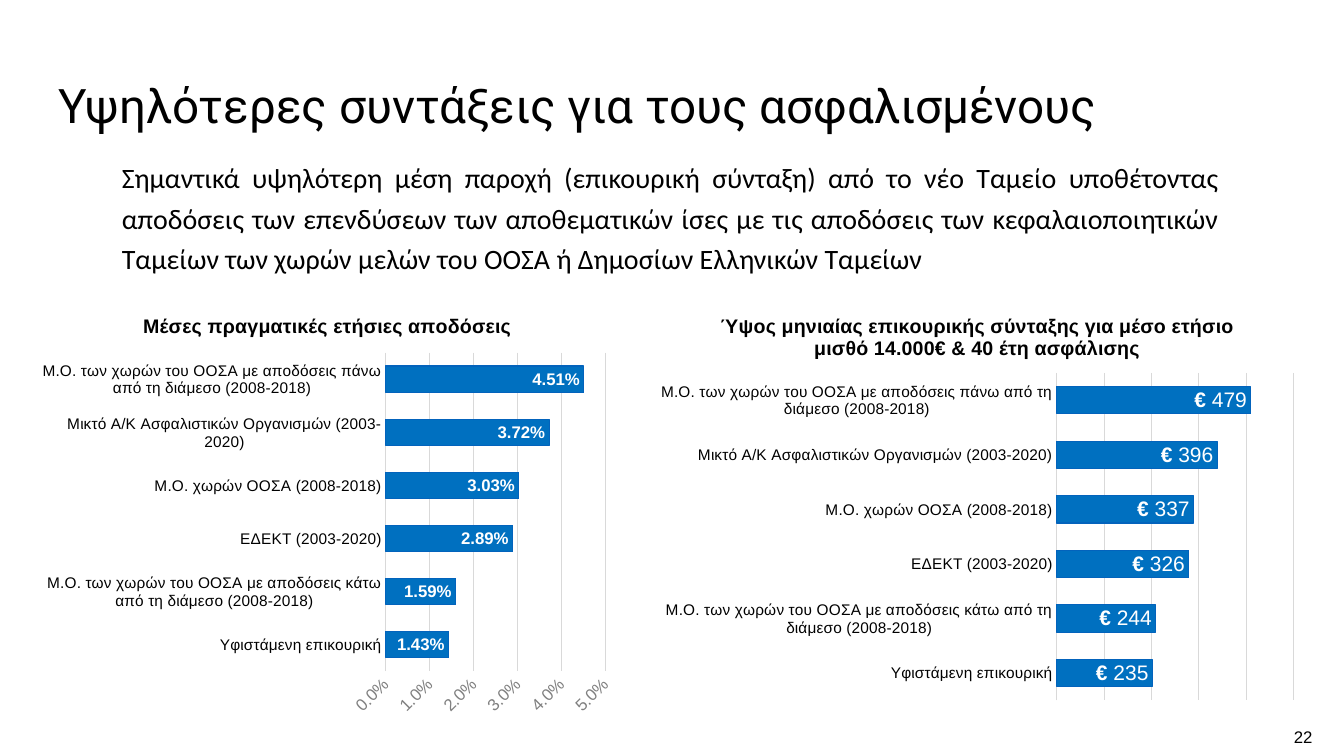
from dataclasses import dataclass
from typing import Optional

from lxml.etree import SubElement
from pptx import Presentation
from pptx.chart.chart import Chart
from pptx.chart.data import CategoryChartData
from pptx.dml.color import RGBColor as RGB
from pptx.enum.chart import XL_CHART_TYPE as ChartType
from pptx.enum.chart import XL_LABEL_POSITION as LabelPos
from pptx.enum.chart import XL_TICK_MARK as Tick
from pptx.enum.text import PP_ALIGN as Align
from pptx.oxml.ns import qn
from pptx.slide import Slide
from pptx.util import Emu, Pt

PX = 9144


@dataclass(frozen=True)
class Theme:
    black: RGB = RGB(0x00, 0x00, 0x00)
    white: RGB = RGB(0xFF, 0xFF, 0xFF)
    bar: RGB = RGB(0x00, 0x70, 0xC0)
    bar_edge: RGB = RGB(0x03, 0x63, 0xBC)
    grid: RGB = RGB(0xD9, 0xD9, 0xD9)
    tick: RGB = RGB(0x80, 0x80, 0x80)
    heading_font: str = "Roboto"
    body_font: str = "Calibri"
    chart_font: str = "Arial"
    heading: int = 34
    body: int = 20
    chart_title: int = 14
    category: int = 11
    small: int = 12
    amount: int = 15
    hairline: float = 0.75


@dataclass(frozen=True)
class Box:
    x: int
    y: int
    w: int
    h: int

    def emu(self) -> tuple[Emu, Emu, Emu, Emu]:
        return Emu(self.x * PX), Emu(self.y * PX), Emu(self.w * PX), Emu(self.h * PX)


@dataclass(frozen=True)
class TextSpec:
    box: Box
    text: str
    font: str
    size: int
    align: Align = Align.LEFT
    wrap: bool = True
    inset: Optional[int] = None
    indent: int = 0
    line_spacing: Optional[float] = None


@dataclass(frozen=True)
class BarSpec:
    box: Box
    plot: Box
    title: str
    values: tuple[float, ...]
    step: float
    label_size: int
    axis_format: str
    label_format: str
    amounts: tuple[int, ...] = ()


T = Theme()

CATEGORIES = (
    "Υφιστάμενη επικουρική",
    "Μ.Ο. των χωρών του ΟΟΣΑ με αποδόσεις κάτω από τη διάμεσο (2008-2018)",
    "ΕΔΕΚΤ (2003-2020)",
    "Μ.Ο. χωρών ΟΟΣΑ (2008-2018)",
    "Μικτό Α/Κ Ασφαλιστικών Οργανισμών (2003-2020)",
    "Μ.Ο. των χωρών του ΟΟΣΑ με αποδόσεις πάνω από τη διάμεσο (2008-2018)",
)

TEXTS = (
    TextSpec(Box(48, 70, 1080, 65), "Υψηλότερες συντάξεις για τους ασφαλισμένους",
             T.heading_font, T.heading),
    TextSpec(Box(99, 148, 1121, 490),
             "Σημαντικά υψηλότερη μέση παροχή (επικουρική σύνταξη) από το νέο Ταμείο "
             "υποθέτοντας αποδόσεις των επενδύσεων των αποθεματικών ίσες με τις αποδόσεις "
             "των κεφαλαιοποιητικών Ταμείων των χωρών μελών του ΟΟΣΑ ή Δημοσίων Ελληνικών "
             "Ταμείων",
             T.body_font, T.body, Align.JUSTIFY, indent=12, line_spacing=1.2),
    TextSpec(Box(1277, 715, 33, 31), "22", T.chart_font, T.small, Align.CENTER,
             wrap=False, inset=6),
)

CHARTS = (
    BarSpec(Box(31, 294, 588, 423), Box(352, 56, 218, 316),
            "Μέσες πραγματικές ετήσιες αποδόσεις",
            (0.0143, 0.0159, 0.0289, 0.0303, 0.0372, 0.0451),
            0.01, T.small, "0.0%", "0.00%"),
    BarSpec(Box(643, 294, 654, 409), Box(406, 76, 235, 325),
            "Ύψος μηνιαίας επικουρικής σύνταξης για μέσο ετήσιο μισθό 14.000€ "
            "& 40 έτη ασφάλισης",
            (202, 209, 279, 289, 339, 410),
            100, T.amount, "#,##0", "#,##0", (235, 244, 326, 337, 396, 479)),
)


def style_font(font, size: int, color: RGB, name: str = T.chart_font,
               bold: bool = False) -> None:
    font.size, font.name, font.bold = Pt(size), name, bold
    font.color.rgb = color


def style_line(line, color: RGB) -> None:
    line.color.rgb = color
    line.width = Pt(T.hairline)


def add_text(slide: Slide, spec: TextSpec) -> None:
    tf = slide.shapes.add_textbox(*spec.box.emu()).text_frame
    tf.word_wrap = spec.wrap
    if spec.inset is not None:
        inset = Emu(spec.inset * PX)
        tf.margin_left = tf.margin_right = tf.margin_top = tf.margin_bottom = inset
    p = tf.paragraphs[0]
    p.text = spec.text
    p.alignment = spec.align
    p.line_spacing = spec.line_spacing
    if spec.indent:
        p._p.get_or_add_pPr().set("marL", str(spec.indent * PX))
    style_font(p.font, spec.size, T.black, spec.font)


def place_plot(chart: Chart, spec: BarSpec) -> None:
    area = chart._chartSpace.chart.plotArea
    for old in area.findall(qn("c:layout")):
        area.remove(old)
    layout = SubElement(area, qn("c:layout"))
    area.insert(0, layout)
    manual = SubElement(layout, qn("c:manualLayout"))
    plot, box = spec.plot, spec.box
    settings = {
        "layoutTarget": "inner", "xMode": "edge", "yMode": "edge",
        "x": plot.x / box.w, "y": plot.y / box.h,
        "w": plot.w / box.w, "h": plot.h / box.h,
    }
    for tag, value in settings.items():
        SubElement(manual, qn(f"c:{tag}")).set("val", str(value))


def style_axes(chart: Chart, spec: BarSpec) -> None:
    cat, val = chart.category_axis, chart.value_axis
    for axis in (cat, val):
        axis.major_tick_mark = axis.minor_tick_mark = Tick.NONE
    style_font(cat.tick_labels.font, T.category, T.black)
    style_line(cat.format.line, T.grid)
    val.minimum_scale, val.maximum_scale = 0, 5 * spec.step
    val.major_unit = spec.step
    val.has_major_gridlines = True
    style_line(val.major_gridlines.format.line, T.grid)
    val.format.line.fill.background()
    val.tick_labels.number_format = spec.axis_format
    val.tick_labels.number_format_is_linked = False
    style_font(val.tick_labels.font, T.small, T.tick)
    val._element.find(qn("c:txPr")).find(qn("a:bodyPr")).set("rot", "-2700000")
    val.visible = not spec.amounts


def style_bars(chart: Chart, spec: BarSpec) -> None:
    plot = chart.plots[0]
    plot.gap_width = 100
    plot.vary_by_categories = False
    series = plot.series[0]
    series.format.fill.solid()
    series.format.fill.fore_color.rgb = T.bar
    style_line(series.format.line, T.bar_edge)
    labels = series.data_labels
    labels.show_value = True
    labels.position = LabelPos.INSIDE_END
    labels.number_format = spec.label_format
    labels.number_format_is_linked = False
    style_font(labels.font, spec.label_size, T.white, bold=True)
    for i, amount in enumerate(spec.amounts):
        label = series.points[i].data_label
        p = label.text_frame.paragraphs[0]
        for text, bold in (("€ ", True), (str(amount), False)):
            r = p.add_run()
            r.text = text
            style_font(r.font, spec.label_size, T.white, bold=bold)
        label.position = LabelPos.INSIDE_END


def add_bar_chart(slide: Slide, spec: BarSpec) -> None:
    data = CategoryChartData()
    data.categories = CATEGORIES
    data.add_series("Series 1", spec.values)
    chart = slide.shapes.add_chart(ChartType.BAR_CLUSTERED, *spec.box.emu(), data).chart
    chart.has_legend = False
    style_font(chart.font, T.category, T.black)
    chart.has_title = True
    p = chart.chart_title.text_frame.paragraphs[0]
    p.text = spec.title
    style_font(p.font, T.chart_title, T.black, bold=True)
    place_plot(chart, spec)
    style_axes(chart, spec)
    style_bars(chart, spec)


def main() -> None:
    prs = Presentation()
    prs.slide_width, prs.slide_height = Emu(1334 * PX), Emu(750 * PX)
    slide = prs.slides.add_slide(prs.slide_layouts[6])
    for text in TEXTS:
        add_text(slide, text)
    for chart in CHARTS:
        add_bar_chart(slide, chart)
    prs.save("out.pptx")


if __name__ == "__main__":
    main()
